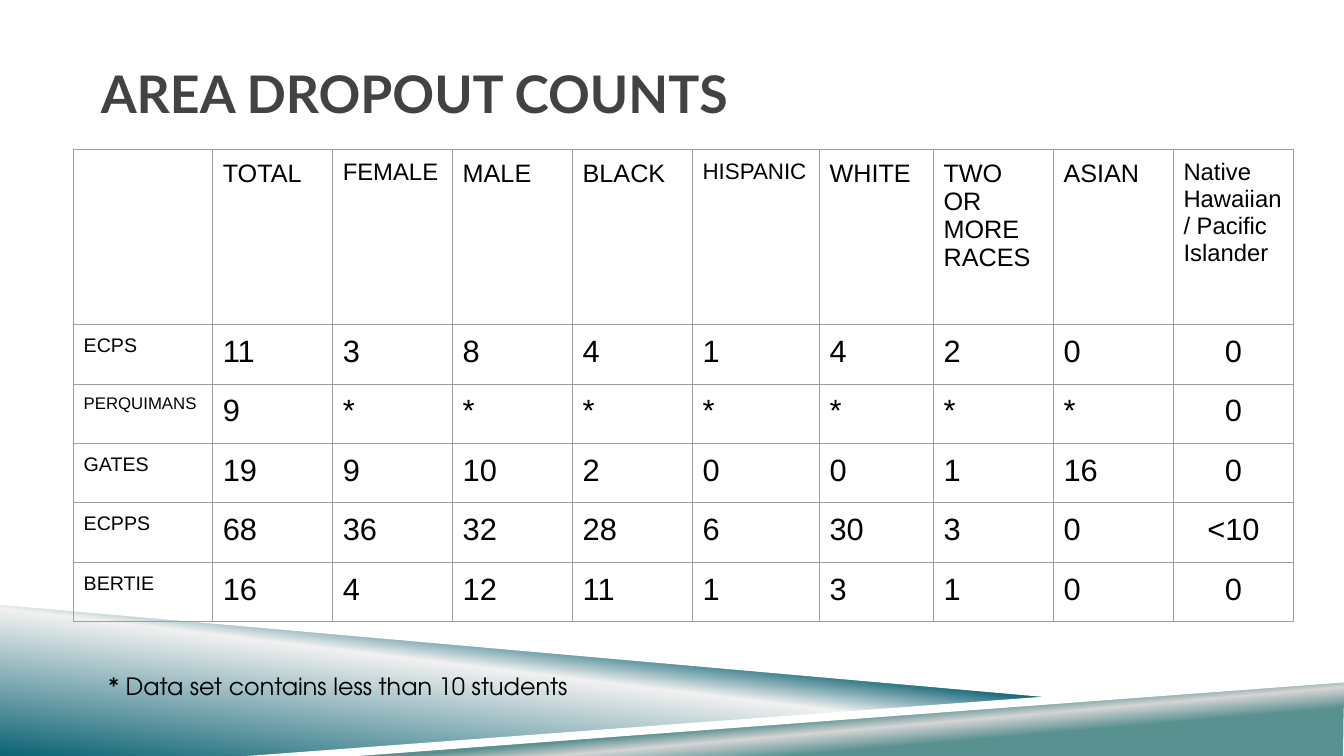
import pptx
import pptx.dml.color
import pptx.enum.text
import pptx.oxml
import pptx.oxml.ns
import pptx.util
from pptx.util import Inches

ALIGN = pptx.enum.text.PP_ALIGN
ANCHOR = pptx.enum.text.MSO_ANCHOR
TEAL, SAGE, WHITE, BLACK = "0B6374", "599191", "FFFFFF", "000000"

# Outlines in inches, then a plain colour or (gradient stops, clockwise angle)
BANDS = [
    ([(0, 5.97), (10.56, 6.92), (2.67, 7.5), (0, 7.5)],
     ([(0, TEAL), (52, "F1F1F1"), (66, TEAL), (100, TEAL)], 277)),
    ([(2.64, 7.5), (13.33, 6.72), (13.32, 7.5)],
     ([(0, SAGE), (28, SAGE), (40, "D5D5D5"), (48, SAGE), (100, SAGE)], 265)),
    ([(0, 5.92), (0, 6), (10.53, 6.93), (11.08, 6.9)], WHITE),
    ([(13.33, 6.69), (2.45, 7.5), (3.55, 7.5), (13.33, 6.77)], WHITE),
]

COUNTS = [
    ["", "TOTAL", "FEMALE", "MALE", "BLACK", "HISPANIC", "WHITE",
     "TWO OR MORE RACES", "ASIAN", "Native Hawaiian/ Pacific Islander"],
    ["ECPS", "11", "3", "8", "4", "1", "4", "2", "0", "0"],
    ["PERQUIMANS", "9", "*", "*", "*", "*", "*", "*", "*", "0"],
    ["GATES", "19", "9", "10", "2", "0", "0", "1", "16", "0"],
    ["ECPPS", "68", "36", "32", "28", "6", "30", "3", "0", "<10"],
    ["BERTIE", "16", "4", "12", "11", "1", "3", "1", "0", "0"],
]
COLUMN_WIDTHS = [1.38, 1.19, 1.19, 1.19, 1.19, 1.26, 1.13, 1.19, 1.19, 1.19]
ROW_HEIGHTS = [1.74] + [0.59] * 5
HEADER_SIZE, DISTRICT_SIZE, COUNT_SIZE = 18, 14, 22
FITTED_SIZES = {"FEMALE": 17, "HISPANIC": 16, "PERQUIMANS": 12, COUNTS[0][-1]: 17}


def rgb(color):
    return pptx.dml.color.RGBColor.from_string(color)


def apply_format(target, values):
    for name, value in values.items():
        setattr(target, name, value)


def margins(across, down):
    return {"margin_left": Inches(across), "margin_right": Inches(across),
            "margin_top": Inches(down), "margin_bottom": Inches(down)}


def write(frame, wording, size, font, color=BLACK, bold=False, align=ALIGN.LEFT):
    paragraph = frame.paragraphs[0]
    paragraph.alignment = align
    run = paragraph.add_run()
    run.text = wording
    apply_format(run.font, {"size": pptx.util.Pt(size), "name": font, "bold": bold})
    run.font.color.rgb = rgb(color)


def fill_gradient(band, stops, angle):
    band.fill.gradient()
    band.fill.gradient_angle = 360 - angle
    stop_list = next(band._element.iter(pptx.oxml.ns.qn("a:gsLst")))
    for stop in list(stop_list):
        stop_list.remove(stop)
    for position, color in stops:
        stop_list.append(pptx.oxml.parse_xml(
            f'<a:gs {pptx.oxml.ns.nsdecls("a")} pos="{position * 1000}">'
            f'<a:srgbClr val="{color}"/></a:gs>'))


def add_band(slide, outline, paint):
    points = [(Inches(x), Inches(y)) for x, y in outline]
    builder = slide.shapes.build_freeform(*points[0])
    builder.add_line_segments(points[1:], close=True)
    band = builder.convert_to_shape()
    band.shadow.inherit = False
    band.line.fill.background()
    if isinstance(paint, str):
        band.fill.solid()
        band.fill.fore_color.rgb = rgb(paint)
    else:
        fill_gradient(band, *paint)


def add_title(slide, wording):
    title = slide.shapes.title
    apply_format(title, {"left": Inches(1), "top": Inches(0.3),
                         "width": Inches(11.33), "height": Inches(1.25)})
    apply_format(title.text_frame, {"vertical_anchor": ANCHOR.MIDDLE,
                                    "word_wrap": True, **margins(0, 0.05)})
    write(title.text_frame, wording, 37, "Lato", "424242", bold=True)
    # Bring the title in front of the bands
    slide.shapes._spTree.append(title._element)


def add_borders(cell, color="9E9E9E", width=0.75):
    properties = cell._tc.get_or_add_tcPr()
    for side in ("lnL", "lnR", "lnT", "lnB"):
        properties.append(pptx.oxml.parse_xml(
            f'<a:{side} {pptx.oxml.ns.nsdecls("a")} w="{pptx.util.Pt(width)}">'
            f'<a:solidFill><a:srgbClr val="{color}"/></a:solidFill></a:{side}>'))


def cell_size(wording, row, column):
    if row == 0:
        usual = HEADER_SIZE
    else:
        usual = COUNT_SIZE if column else DISTRICT_SIZE
    return FITTED_SIZES.get(wording, usual)


def add_counts(slide):
    counts = slide.shapes.add_table(
        len(COUNTS), len(COLUMN_WIDTHS), Inches(0.73), Inches(1.48),
        Inches(sum(COLUMN_WIDTHS)), Inches(sum(ROW_HEIGHTS))).table
    apply_format(counts, {"first_row": False, "horz_banding": False})
    for column, width in zip(counts.columns, COLUMN_WIDTHS):
        column.width = Inches(width)
    for row, height in zip(counts.rows, ROW_HEIGHTS):
        row.height = Inches(height)

    last = len(COLUMN_WIDTHS) - 1
    for r, wordings in enumerate(COUNTS):
        for c, wording in enumerate(wordings):
            cell = counts.cell(r, c)
            apply_format(cell, margins(0.1, 0.1))
            add_borders(cell)
            cell.fill.background()
            if wording:
                align = ALIGN.CENTER if r and c == last else ALIGN.LEFT
                write(cell.text_frame, wording, cell_size(wording, r, c),
                      "Arial", align=align)


def add_note(slide, wording):
    note = slide.shapes.add_textbox(Inches(0.98), Inches(6.56), Inches(4.98), Inches(0.41))
    apply_format(note.text_frame, {"word_wrap": True, "vertical_anchor": ANCHOR.TOP,
                                   **margins(0.1, 0.1)})
    write(note.text_frame, wording, 17, "TeX Gyre Adventor")


def main():
    deck = pptx.Presentation()
    apply_format(deck, {"slide_width": Inches(13.33), "slide_height": Inches(7.5)})
    slide = deck.slides.add_slide(deck.slide_layouts.get_by_name("Title Only"))
    # Decorative bands at the foot
    for outline, paint in BANDS:
        add_band(slide, outline, paint)
    # Content
    add_title(slide, "AREA DROPOUT COUNTS")
    add_counts(slide)
    add_note(slide, "* Data set contains less than 10 students")
    deck.save("out.pptx")


if __name__ == "__main__":
    main()
